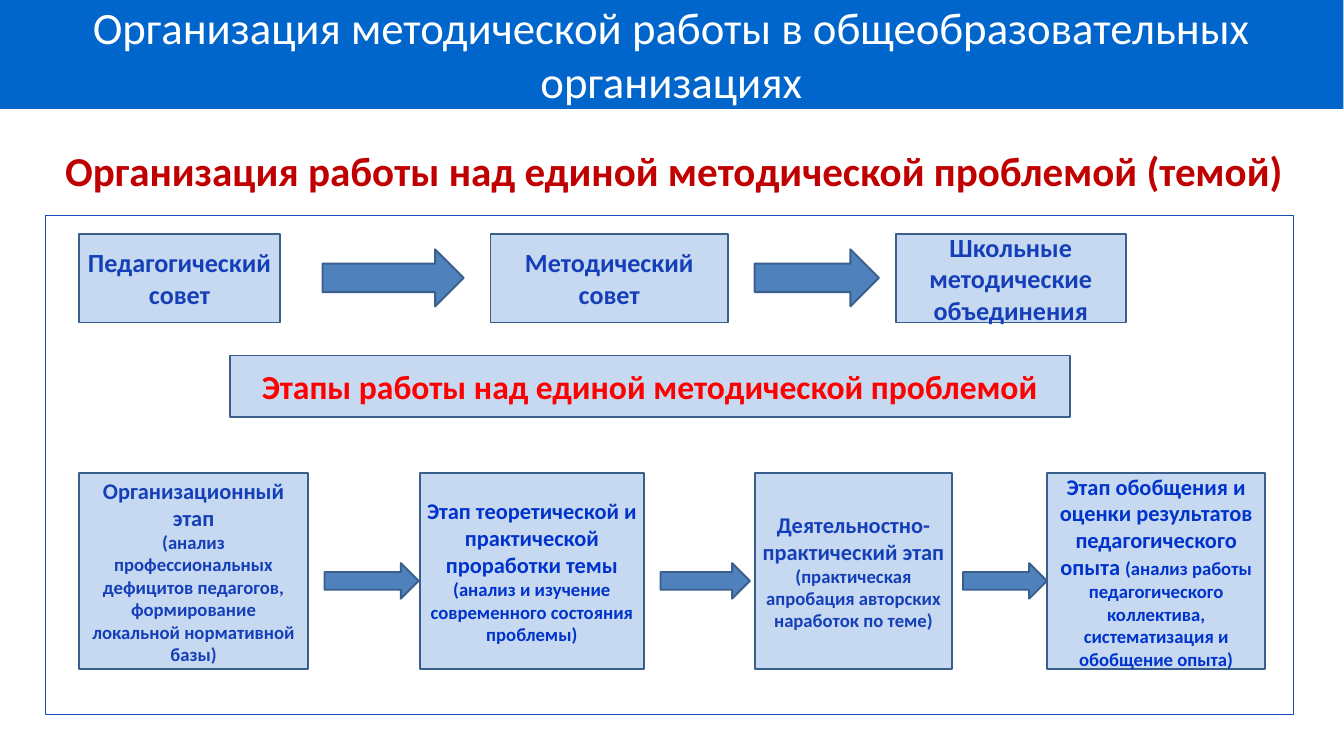
from dataclasses import dataclass
from pptx import Presentation
from pptx.dml.color import RGBColor
from pptx.enum.shapes import MSO_SHAPE
from pptx.enum.text import MSO_ANCHOR, PP_ALIGN
from pptx.util import Inches, Pt

RECT = MSO_SHAPE.RECTANGLE
ARROW = MSO_SHAPE.RIGHT_ARROW
TOP = MSO_ANCHOR.TOP
MIDDLE = MSO_ANCHOR.MIDDLE
CENTER = PP_ALIGN.CENTER


@dataclass(frozen=True)
class Theme:
    font: str = "Calibri"
    white: str = "FFFFFF"
    banner: str = "0066CC"
    frame: str = "134EB9"
    title: str = "C00000"
    accent: str = "FF0000"
    box: str = "C6D9F1"
    edge: str = "3A5F8C"
    arrow: str = "4F81BD"
    navy: str = "143FB8"
    blue: str = "0033CC"
    banner_size: int = 48
    title_size: int = 44
    stage_size: int = 36
    body_size: int = 28
    head_size: int = 24
    note_size: int = 20


class Board:
    def __init__(self, slide, theme):
        self.slide = slide
        self.theme = theme

    def shape(self, kind, place, fill=None, line=None, width=2):
        item = self.slide.shapes.add_shape(kind, *map(Inches, place))
        item.shadow.inherit = False
        if fill:
            item.fill.solid()
            item.fill.fore_color.rgb = RGBColor.from_string(fill)
        else:
            item.fill.background()
        if line:
            item.line.color.rgb = RGBColor.from_string(line)
            item.line.width = Pt(width)
        else:
            item.line.fill.background()
        return item

    def label(self, item, paras, color, bold=True, anchor=MIDDLE):
        frame = item.text_frame
        frame.word_wrap = True
        frame.vertical_anchor = anchor
        for index, parts in enumerate(paras):
            para = frame.add_paragraph() if index else frame.paragraphs[0]
            para.alignment = CENTER
            for text, size in parts:
                run = para.add_run()
                run.text = text
                run.font.name = self.theme.font
                run.font.size = Pt(size)
                run.font.bold = bold
                run.font.color.rgb = RGBColor.from_string(color)

    def banner(self, place, text):
        item = self.shape(RECT, place, self.theme.banner)
        frame = item.text_frame
        frame.margin_left = frame.margin_right = 0
        frame.margin_top = frame.margin_bottom = 0
        self.label(item, [[(text, self.theme.banner_size)]],
                   self.theme.white, False, TOP)

    def title(self, place, text):
        item = self.slide.shapes.add_textbox(*map(Inches, place))
        self.label(item, [[(text, self.theme.title_size)]],
                   self.theme.title, anchor=TOP)

    def box(self, place, paras, color):
        item = self.shape(RECT, place, self.theme.box, self.theme.edge)
        self.label(item, paras, color)

    def arrow(self, place):
        self.shape(ARROW, place, self.theme.arrow, self.theme.edge)


def main():
    deck = Presentation()
    deck.slide_width = Inches(20)
    deck.slide_height = Inches(11.25)
    theme = Theme()
    board = Board(deck.slides.add_slide(deck.slide_layouts[6]), theme)

    board.banner((-0.01, 0, 20, 1.62),
                 "Организация методической работы в общеобразовательных организациях")
    board.shape(RECT, (0.67, 3.21, 18.58, 7.42), line=theme.frame, width=1)
    board.title((0.83, 2.12, 18.42, 0.84),
                "Организация работы над единой методической проблемой (темой)")

    bodies = [
        (1.17, 3, ["Педагогический совет"]),
        (7.3, 3.53, ["Методический совет"]),
        (13.33, 3.42, ["Школьные", "методические объединения"]),
    ]
    for left, width, lines in bodies:
        paras = [[(line, theme.body_size)] for line in lines]
        board.box((left, 3.48, width, 1.32), paras, theme.navy)
    for left, width in [(4.8, 2.1), (11.23, 1.85)]:
        board.arrow((left, 3.71, width, 0.85))

    board.box((3.42, 5.29, 12.5, 0.92),
              [[("Этапы работы над единой методической проблемой",
                 theme.stage_size)]], theme.accent)

    stages = [
        (1.17, 3.42, theme.navy, True, "Организационный этап",
         "(анализ профессиональных дефицитов педагогов, "
         "формирование локальной нормативной базы)"),
        (6.25, 3.33, theme.blue, False,
         "Этап теоретической и практической проработки темы ",
         "(анализ и изучение современного состояния проблемы)"),
        (11.23, 2.94, theme.navy, True, "Деятельностно-практический этап ",
         "(практическая апробация авторских наработок по теме)"),
        (15.58, 3.25, theme.blue, False,
         "Этап обобщения и оценки результатов педагогического опыта ",
         "(анализ работы педагогического коллектива, "
         "систематизация и обобщение опыта)"),
    ]
    for left, width, color, split, head, note in stages:
        parts = [(head, theme.head_size), (note, theme.note_size)]
        paras = [[part] for part in parts] if split else [parts]
        board.box((left, 7.04, width, 2.92), paras, color)
    for left, width in [(4.83, 1.4), (9.83, 1.33), (14.33, 1.25)]:
        board.arrow((left, 8.38, width, 0.53))

    deck.save("out.pptx")


if __name__ == "__main__":
    main()
